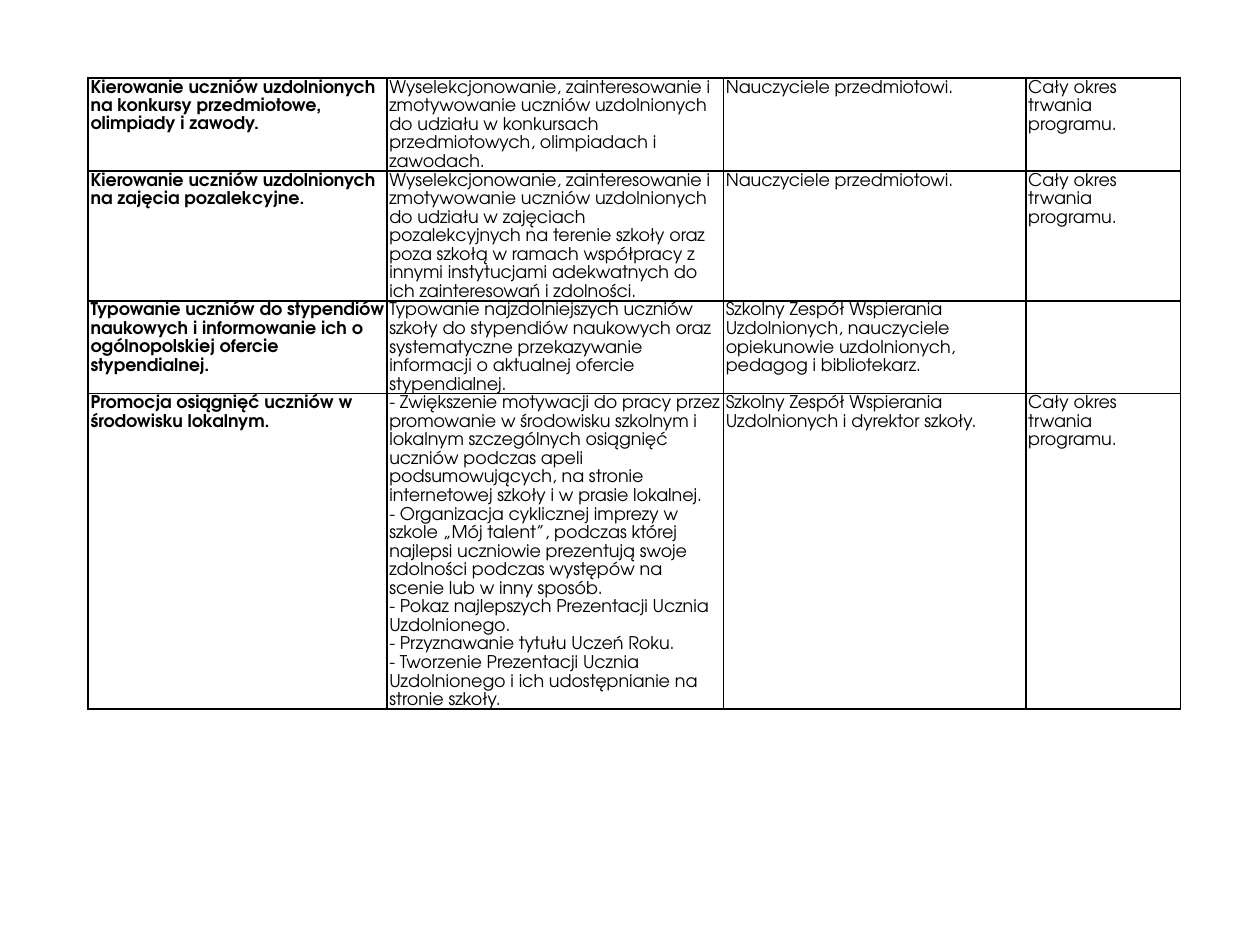
from dataclasses import dataclass

import lxml.etree
import pptx
import pptx.dml.color
import pptx.oxml.ns
import pptx.util

Pt = pptx.util.Pt


@dataclass(frozen=True)
class Theme:
    font: str = "TeX Gyre Adventor"
    size: float = 10
    text: str = "000000"
    border: str = "000000"
    border_width: float = 1
    inset: float = 1.4
    line_spacing: float = 1.15


THEME = Theme()
COLUMN_WIDTHS = [170.7, 192.3, 172.8, 88.5]
ROW_HEIGHTS = [33.1, 54.7, 38.2, 131.8]
SUBJECT_TEACHERS = ["Nauczyciele przedmiotowi."]
WHOLE_PROGRAMME = ["Cały okres trwania programu."]

ACTIVITIES = [
    [
        ["Kierowanie uczniów uzdolnionych na konkursy przedmiotowe, olimpiady i zawody."],
        ["Wyselekcjonowanie, zainteresowanie i zmotywowanie uczniów uzdolnionych "
         "do udziału w konkursach przedmiotowych, olimpiadach i zawodach."],
        SUBJECT_TEACHERS,
        WHOLE_PROGRAMME,
    ],
    [
        ["Kierowanie uczniów uzdolnionych na zajęcia pozalekcyjne."],
        ["Wyselekcjonowanie, zainteresowanie i zmotywowanie uczniów uzdolnionych "
         "do udziału w zajęciach pozalekcyjnych na terenie szkoły oraz poza szkołą "
         "w ramach współpracy z innymi instytucjami adekwatnych do ich "
         "zainteresowań i zdolności."],
        SUBJECT_TEACHERS,
        WHOLE_PROGRAMME,
    ],
    [
        ["Typowanie uczniów do stypendiów naukowych i informowanie ich o "
         "ogólnopolskiej ofercie stypendialnej."],
        ["Typowanie najzdolniejszych uczniów szkoły do stypendiów naukowych oraz "
         "systematyczne przekazywanie informacji o aktualnej ofercie stypendialnej."],
        ["Szkolny Zespół Wspierania Uzdolnionych, nauczyciele opiekunowie "
         "uzdolnionych, pedagog i bibliotekarz."],
        [],
    ],
    [
        ["Promocja osiągnięć uczniów w środowisku lokalnym."],
        [
            "- Zwiększenie motywacji do pracy przez promowanie w środowisku szkolnym "
            "i lokalnym szczególnych osiągnięć uczniów podczas apeli podsumowujących, "
            "na stronie internetowej szkoły i w prasie lokalnej.",
            "- Organizacja cyklicznej imprezy w szkole „Mój talent”, podczas której "
            "najlepsi uczniowie prezentują swoje zdolności podczas występów na scenie "
            "lub w inny sposób.",
            "- Pokaz najlepszych Prezentacji Ucznia Uzdolnionego.",
            "- Przyznawanie tytułu Uczeń Roku.",
            "- Tworzenie Prezentacji Ucznia Uzdolnionego i ich udostępnianie na "
            "stronie szkoły.",
        ],
        ["Szkolny Zespół Wspierania Uzdolnionych i dyrektor szkoły."],
        WHOLE_PROGRAMME,
    ],
]


def set_borders(cell):
    qn = pptx.oxml.ns.qn
    properties = cell._tc.get_or_add_tcPr()
    for index, side in enumerate(("a:lnL", "a:lnR", "a:lnT", "a:lnB")):
        line = lxml.etree.Element(qn(side), w=str(Pt(THEME.border_width)))
        fill = lxml.etree.SubElement(line, qn("a:solidFill"))
        lxml.etree.SubElement(fill, qn("a:srgbClr"), val=THEME.border)
        properties.insert(index, line)


def fill_cell(cell, texts, bold):
    cell.margin_left = cell.margin_right = Pt(THEME.inset)
    cell.margin_top = cell.margin_bottom = Pt(0)
    cell.fill.background()
    set_borders(cell)
    for index, text in enumerate(texts):
        frame = cell.text_frame
        paragraph = frame.add_paragraph() if index else frame.paragraphs[0]
        paragraph.line_spacing = THEME.line_spacing
        run = paragraph.add_run()
        run.text = text
        run.font.name = THEME.font
        run.font.size = Pt(THEME.size)
        run.font.bold = bold
        run.font.color.rgb = pptx.dml.color.RGBColor.from_string(THEME.text)


def add_activity_table(slide, left, top, width, height):
    shape = slide.shapes.add_table(
        len(ACTIVITIES), len(COLUMN_WIDTHS), Pt(left), Pt(top), Pt(width), Pt(height)
    )
    table = shape.table
    table.first_row = False
    table.horz_banding = False
    scale = width / sum(COLUMN_WIDTHS)
    for column, column_width in zip(table.columns, COLUMN_WIDTHS):
        column.width = Pt(column_width * scale)
    for row, row_height, activity in zip(table.rows, ROW_HEIGHTS, ACTIVITIES):
        row.height = Pt(row_height)
        for index, (cell, texts) in enumerate(zip(row.cells, activity)):
            fill_cell(cell, texts, bold=index == 0)
    shape.height = Pt(height)


def main():
    presentation = pptx.Presentation()
    presentation.slide_width = Pt(720)
    presentation.slide_height = Pt(540)
    slide = presentation.slides.add_slide(presentation.slide_layouts[6])
    add_activity_table(slide, left=50.4, top=44.6, width=624.3, height=469.4)
    presentation.save("out.pptx")


if __name__ == "__main__":
    main()
